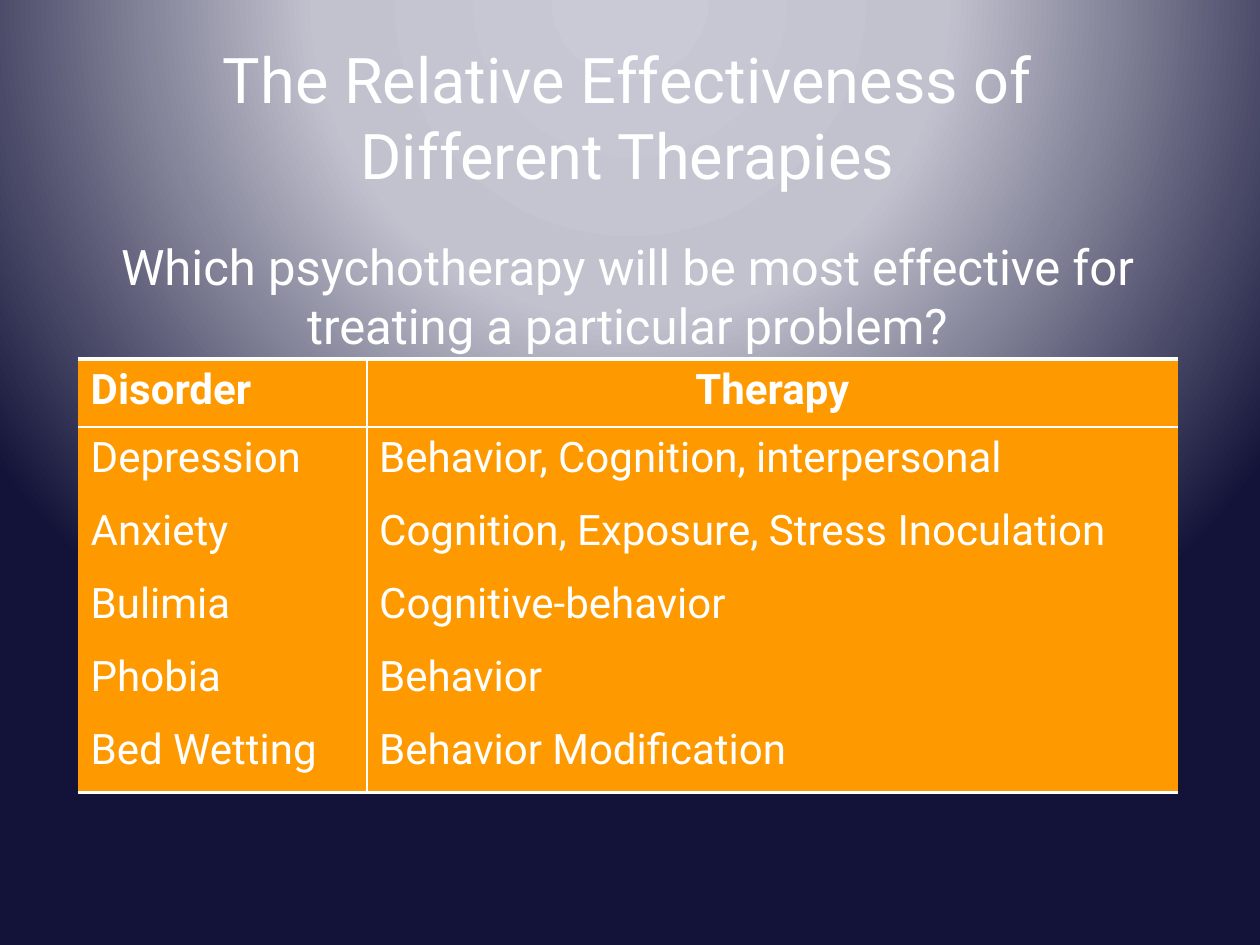
from pptx import Presentation, util as u
from pptx.dml.color import RGBColor
from pptx.enum import text
from pptx.oxml.ns import qn
from lxml import etree

FONT, WHITE, ORANGE = "Roboto", "FFFFFF", "FF9900"
NO_STYLE = "{2D5ABB26-0587-4C30-8999-92F81FD0307C}"
GRADIENT = [(0, "CACAD6"), (40, "C2C2CF"), (100, "131339")]
FOCUS = {"l": 50, "t": -80, "r": 50, "b": 180}

# wording, (left, top, width, height), size, anchor
HEADINGS = [
    ("The Relative Effectiveness of Different Therapies",
     (0.73, 0.3, 8.5, 1.25), 36, text.MSO_ANCHOR.MIDDLE),
    ("Which psychotherapy will be most effective for treating a particular problem?",
     (0.73, 1.83, 8.5, 1.17), 28, text.MSO_ANCHOR.TOP),
]
ROWS = [
    ("Disorder", "Therapy"),
    ("Depression", "Behavior, Cognition, interpersonal"),
    ("Anxiety", "Cognition, Exposure, Stress Inoculation"),
    ("Bulimia", "Cognitive-behavior"),
    ("Phobia", "Behavior"),
    ("Bed Wetting", "Behavior Modification"),
]
TABLE_LEFT, TABLE_TOP = 0.62, 2.85
COL_WIDTHS = [2.29, 6.44]
ROW_HEIGHTS = [0.54] + [0.58] * (len(ROWS) - 1)


def rgb(color):
    return RGBColor.from_string(color)


def sub(parent, tag, **attrs):
    return etree.SubElement(parent, qn(tag), {k: str(v) for k, v in attrs.items()})


def set_text(tf, words, size, align, bold=False):
    tf.text = words
    p = tf.paragraphs[0]
    p.alignment = align
    font = p.runs[0].font
    font.name, font.size, font.bold = FONT, u.Pt(size), bold
    font.color.rgb = rgb(WHITE)


def set_background(s):
    """Radial gradient centred above the top edge."""
    s.background.fill.gradient()
    grad = s._element.find(".//" + qn("a:gradFill"))
    for child in list(grad):
        grad.remove(child)
    stops = sub(grad, "a:gsLst")
    for pos, color in GRADIENT:
        sub(sub(stops, "a:gs", pos=pos * 1000), "a:srgbClr", val=color)
    sub(sub(grad, "a:path", path="circle"), "a:fillToRect",
        **{side: pct * 1000 for side, pct in FOCUS.items()})


def set_borders(cell, widths):
    """Draw white borders; a width of 0 leaves that side bare."""
    tc_pr = cell._tc.get_or_add_tcPr()
    for side in "LRTB":
        width = widths.get(side, 0)
        ln = sub(tc_pr, "a:ln" + side, w=u.Pt(width))
        if width:
            sub(sub(ln, "a:solidFill"), "a:srgbClr", val=WHITE)
        else:
            sub(ln, "a:noFill")


def add_therapy_table(s):
    last_row, last_col = len(ROWS) - 1, len(COL_WIDTHS) - 1
    frame = s.shapes.add_table(
        len(ROWS), len(COL_WIDTHS), u.Inches(TABLE_LEFT), u.Inches(TABLE_TOP),
        u.Inches(sum(COL_WIDTHS)), u.Inches(sum(ROW_HEIGHTS)))
    table = frame.table
    table._tbl.tblPr.find(qn("a:tableStyleId")).text = NO_STYLE
    table.horz_banding = False
    for col, width in zip(table.columns, COL_WIDTHS):
        col.width = u.Inches(width)
    for i, (row, height) in enumerate(zip(table.rows, ROW_HEIGHTS)):
        row.height = u.Inches(height)
        for j, cell in enumerate(row.cells):
            centred = i == 0 and j == last_col
            set_text(cell.text_frame, ROWS[i][j], 24,
                     text.PP_ALIGN.CENTER if centred else text.PP_ALIGN.LEFT, bold=i == 0)
            set_borders(cell, {
                "L": 1.5 if j > 0 else 0,
                "R": 1.5 if j < last_col else 0,
                "T": {0: 2.25, 1: 1.5}.get(i, 0),
                "B": {0: 1.5, last_row: 2.25}.get(i, 0),
            })
            cell.fill.solid()
            cell.fill.fore_color.rgb = rgb(ORANGE)


def main():
    prs = Presentation()
    prs.slide_width, prs.slide_height = u.Inches(10), u.Inches(7.5)
    s = prs.slides.add_slide(prs.slide_layouts[6])
    set_background(s)
    for words, box, size, anchor in HEADINGS:
        tf = s.shapes.add_textbox(*map(u.Inches, box)).text_frame
        tf.word_wrap = True
        tf.vertical_anchor = anchor
        set_text(tf, words, size, text.PP_ALIGN.CENTER)
    add_therapy_table(s)
    prs.save("out.pptx")


if __name__ == "__main__":
    main()
